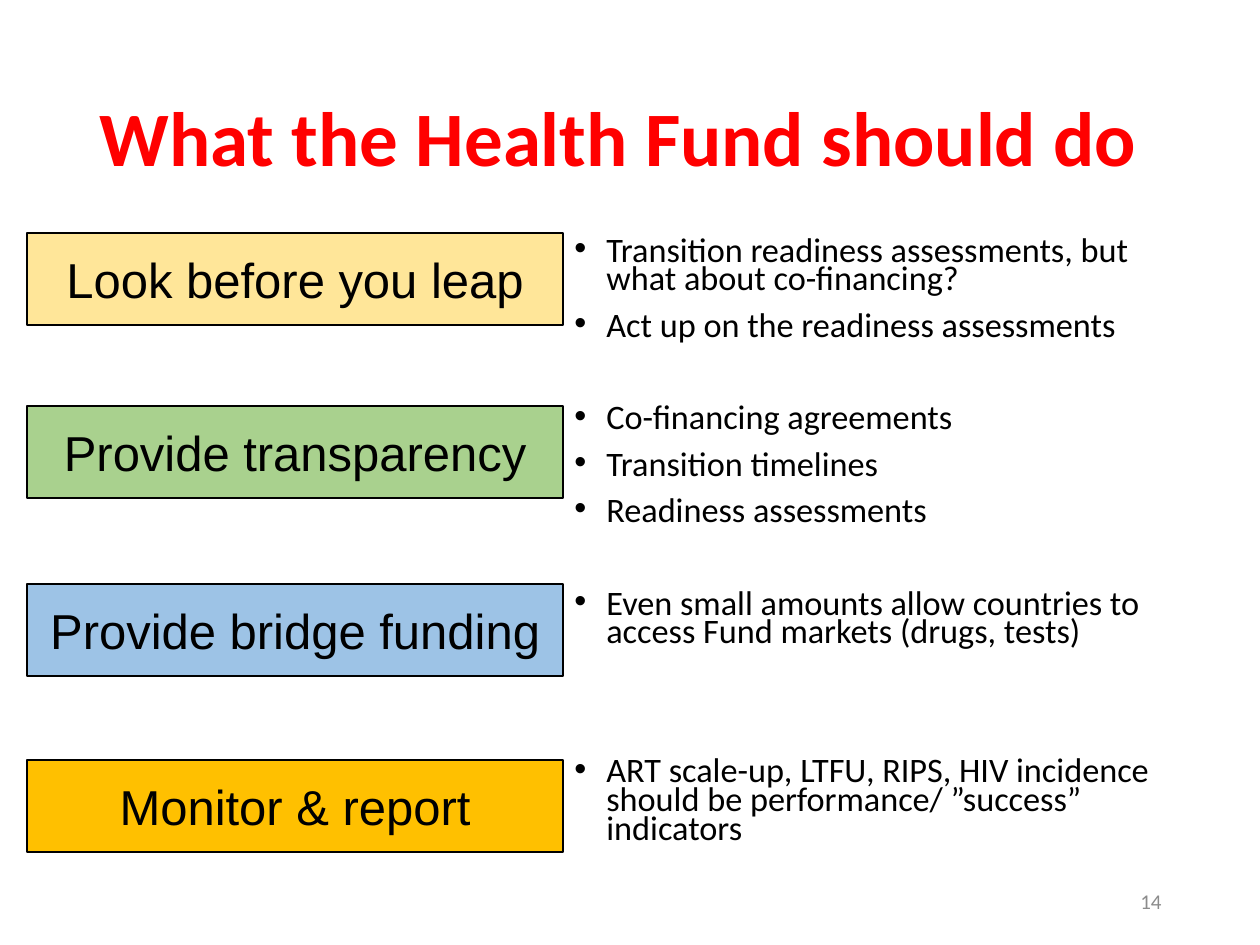
from lxml.etree import SubElement
from pptx import Presentation
from pptx.dml.color import RGBColor
from pptx.enum.shapes import MSO_SHAPE
from pptx.enum.text import MSO_ANCHOR as Anchor, PP_ALIGN as Align
from pptx.oxml.ns import qn
from pptx.util import Emu, Pt

PX = 914400 / 126

BLACK = RGBColor(0x00, 0x00, 0x00)
RED = RGBColor(0xFF, 0x00, 0x00)
GREY = RGBColor(0x8C, 0x8C, 0x8C)
CREAM = RGBColor(0xFF, 0xE6, 0x99)
GREEN = RGBColor(0xA9, 0xD1, 0x8E)
BLUE = RGBColor(0x9D, 0xC3, 0xE6)
AMBER = RGBColor(0xFF, 0xC0, 0x00)

TITLE = "What the Health Fund should do"
PAGE_NUMBER = "14"

# label, fill, top in px, space before the first bullet in points, bullets
ACTIONS = [
    ("Look before you leap", CREAM, 233, 10, [
        "Transition readiness assessments, but what about co-financing?",
        "Act up on the readiness assessments"]),
    ("Provide transparency", GREEN, 406, 36.5, [
        "Co-financing agreements",
        "Transition timelines",
        "Readiness assessments"]),
    ("Provide bridge funding", BLUE, 584, 36.5, [
        "Even small amounts allow countries to access Fund markets (drugs, tests)"]),
    ("Monitor & report", AMBER, 760, 63, [
        "ART scale-up, LTFU, RIPS, HIV incidence should be performance/ ”success” "
        "indicators"]),
]
LABEL_LEFT, LABEL_WIDTH, LABEL_HEIGHT = 27, 536, 92
BULLET_GAP = 10


def px(*lengths):
    return [Emu(round(length * PX)) for length in lengths]


def write(para, text, size, font="Calibri", color=BLACK, bold=False,
          align=Align.LEFT, line_spacing=1.0, before=0):
    para.alignment = align
    para.line_spacing = line_spacing
    para.space_before = Pt(before)
    span = para.add_run()
    span.text = text
    span.font.size = Pt(size)
    span.font.name = font
    span.font.bold = bold
    span.font.color.rgb = color


def add_bullet(para, indent=32):
    props = para._p.get_or_add_pPr()
    hang = px(indent)[0]
    props.set("marL", str(hang))
    props.set("indent", str(-hang))
    SubElement(props, qn("a:buFont")).set("typeface", "Arial")
    SubElement(props, qn("a:buChar")).set("char", "•")


def add_frame(page, place, anchor):
    frame = page.shapes.add_textbox(*px(*place)).text_frame
    frame.word_wrap = True
    frame.vertical_anchor = anchor
    return frame


def add_label(page, text, fill, top):
    box = page.shapes.add_shape(
        MSO_SHAPE.RECTANGLE, *px(LABEL_LEFT, top, LABEL_WIDTH, LABEL_HEIGHT))
    box.shadow.inherit = False
    box.fill.solid()
    box.fill.fore_color.rgb = fill
    box.line.color.rgb = BLACK
    box.line.width = Pt(1)
    box.text_frame.vertical_anchor = Anchor.MIDDLE
    write(box.text_frame.paragraphs[0], text, 28, font="Arial", align=Align.CENTER)


def main():
    deck = Presentation()
    deck.slide_width, deck.slide_height = px(1260, 945)
    page = deck.slides.add_slide(deck.slide_layouts[6])

    title = add_frame(page, (87, 50, 1086, 183), Anchor.MIDDLE)
    write(title.paragraphs[0], TITLE, 44, color=RED, bold=True, line_spacing=0.9)

    body = add_frame(page, (562, 233, 611, 662), Anchor.TOP)
    para = body.paragraphs[0]
    for label, fill, top, group_gap, bullets in ACTIONS:
        add_label(page, label, fill, top)
        for index, text in enumerate(bullets):
            para = body.add_paragraph() if para.runs else para
            write(para, text, 19.6, line_spacing=0.7,
                  before=BULLET_GAP if index else group_gap)
            add_bullet(para)

    number = add_frame(page, (890, 876, 284, 50), Anchor.MIDDLE)
    write(number.paragraphs[0], PAGE_NUMBER, 12, color=GREY, align=Align.RIGHT)

    deck.save("out.pptx")


if __name__ == "__main__":
    main()
